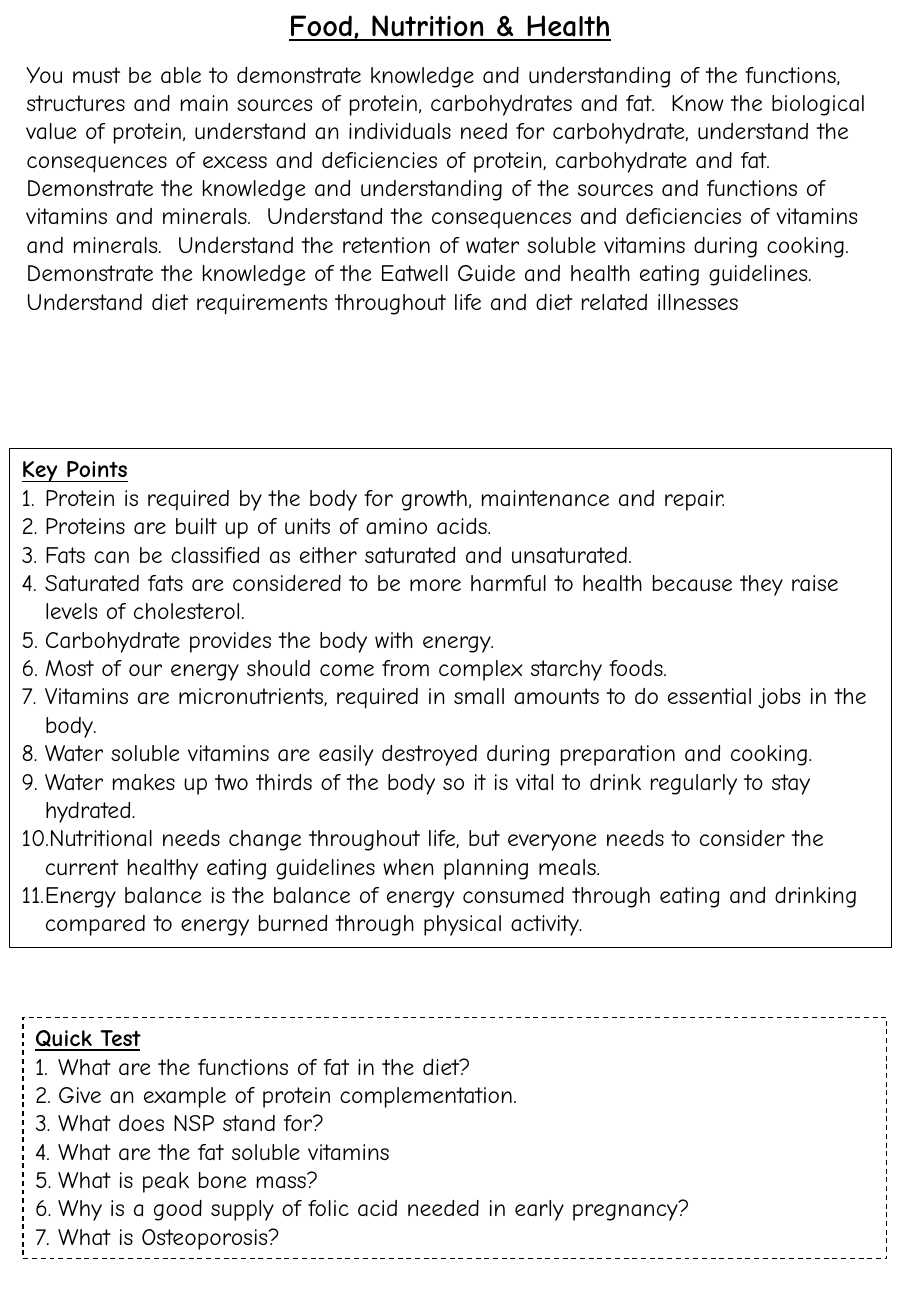
from lxml.etree import SubElement
from pptx import Presentation
from pptx.dml.color import RGBColor
from pptx.enum.dml import MSO_LINE
from pptx.enum.shapes import MSO_SHAPE
from pptx.enum.text import MSO_ANCHOR, PP_ALIGN
from pptx.oxml.ns import qn
from pptx.util import Inches, Pt

BLACK = RGBColor(0, 0, 0)
FONT = "Comic Neue"
WIDE, HIGH = Inches(7.5), Inches(10.83)
INDENT = Inches(0.19)

# Boxes: left, top, width, height in percent of the slide
TITLE_BOX = (2.53, 0, 93.73, 3.69)
INTRO_BOX = (1.6, 4.06, 96.8, 24.84)
POINTS_BOX = (1.07, 34.07, 96.8, 37.95)
TEST_BOX = (2.53, 77.29, 94.8, 18.37)

INTRO = [
    "You must be able to demonstrate knowledge and understanding of the functions, "
    "structures and main sources of protein, carbohydrates and fat.  Know the biological "
    "value of protein, understand an individuals need for carbohydrate, understand the "
    "consequences of excess and deficiencies of protein, carbohydrate and fat.",
    "Demonstrate the knowledge and understanding of the sources and functions of "
    "vitamins and minerals.  Understand the consequences and deficiencies of vitamins "
    "and minerals.  Understand the retention of water soluble vitamins during cooking.",
    "Demonstrate the knowledge of the Eatwell Guide and health eating guidelines.  "
    "Understand diet requirements throughout life and diet related illnesses",
]
POINTS = [
    "Protein is required by the body for growth, maintenance and repair.",
    "Proteins are built up of units of amino acids.",
    "Fats can be classified as either saturated and unsaturated.",
    "Saturated fats are considered to be more harmful to health because they raise "
    "levels of cholesterol.",
    "Carbohydrate provides the body with energy.",
    "Most of our energy should come from complex starchy foods.",
    "Vitamins are micronutrients, required in small amounts to do essential jobs in the body.",
    "Water soluble vitamins are easily destroyed during preparation and cooking.",
    "Water makes up two thirds of the body so it is vital to drink regularly to stay hydrated.",
    "Nutritional needs change throughout life, but everyone needs to consider the "
    "current healthy eating guidelines when planning meals.",
    "Energy balance is the balance of energy consumed through eating and drinking "
    "compared to energy burned through physical activity.",
]
TESTS = [
    "What are the functions of fat in the diet?",
    "Give an example of protein complementation.",
    "What does NSP stand for?",
    "What are the fat soluble vitamins",
    "What is peak bone mass?",
    "Why is a good supply of folic acid needed in early pregnancy?",
    "What is Osteoporosis?",
]


def scale(box):
    """Turn percentages of the slide into lengths."""
    return [int(part * side / 100) for part, side in zip(box, (WIDE, HIGH) * 2)]


def write(frame, lines, size=14, head=False):
    """Fill the frame; with head, the first line is bold and underlined."""
    frame.word_wrap = True
    frame.vertical_anchor = MSO_ANCHOR.TOP
    frame.text = "\n".join(lines)
    for row, para in enumerate(frame.paragraphs):
        para.alignment = PP_ALIGN.LEFT
        for run in para.runs:
            font = run.font
            font.name, font.size = FONT, Pt(size)
            font.color.rgb = BLACK
            font.bold = font.underline = head and row == 0


def number(para):
    props = para._p.get_or_add_pPr()
    props.set("marL", str(INDENT))
    props.set("indent", str(-INDENT))
    SubElement(props, qn("a:buFont"), typeface="+mj-lt")
    SubElement(props, qn("a:buAutoNum"), type="arabicPeriod")


def add_title(slide, box):
    frame = slide.shapes.add_textbox(*scale(box)).text_frame
    write(frame, ["Food, Nutrition & Health"], size=18, head=True)
    frame.paragraphs[0].alignment = PP_ALIGN.CENTER


def add_intro(slide, box):
    write(slide.shapes.add_textbox(*scale(box)).text_frame, INTRO)


def add_list(slide, box, head, items, dash=MSO_LINE.SOLID):
    """Draw a framed, numbered list under a heading."""
    panel = slide.shapes.add_shape(MSO_SHAPE.RECTANGLE, *scale(box))
    panel.shadow.inherit = False
    panel.fill.background()
    panel.line.color.rgb = BLACK
    panel.line.width = Pt(0.75)
    panel.line.dash_style = dash
    write(panel.text_frame, [head, *items], head=True)
    for para in panel.text_frame.paragraphs[1:]:
        number(para)


def main():
    deck = Presentation()
    deck.slide_width, deck.slide_height = WIDE, HIGH
    slide = deck.slides.add_slide(deck.slide_layouts[6])
    add_title(slide, TITLE_BOX)
    add_intro(slide, INTRO_BOX)
    add_list(slide, POINTS_BOX, "Key Points", POINTS)
    add_list(slide, TEST_BOX, "Quick Test", TESTS, MSO_LINE.DASH)
    deck.save("out.pptx")


if __name__ == "__main__":
    main()
